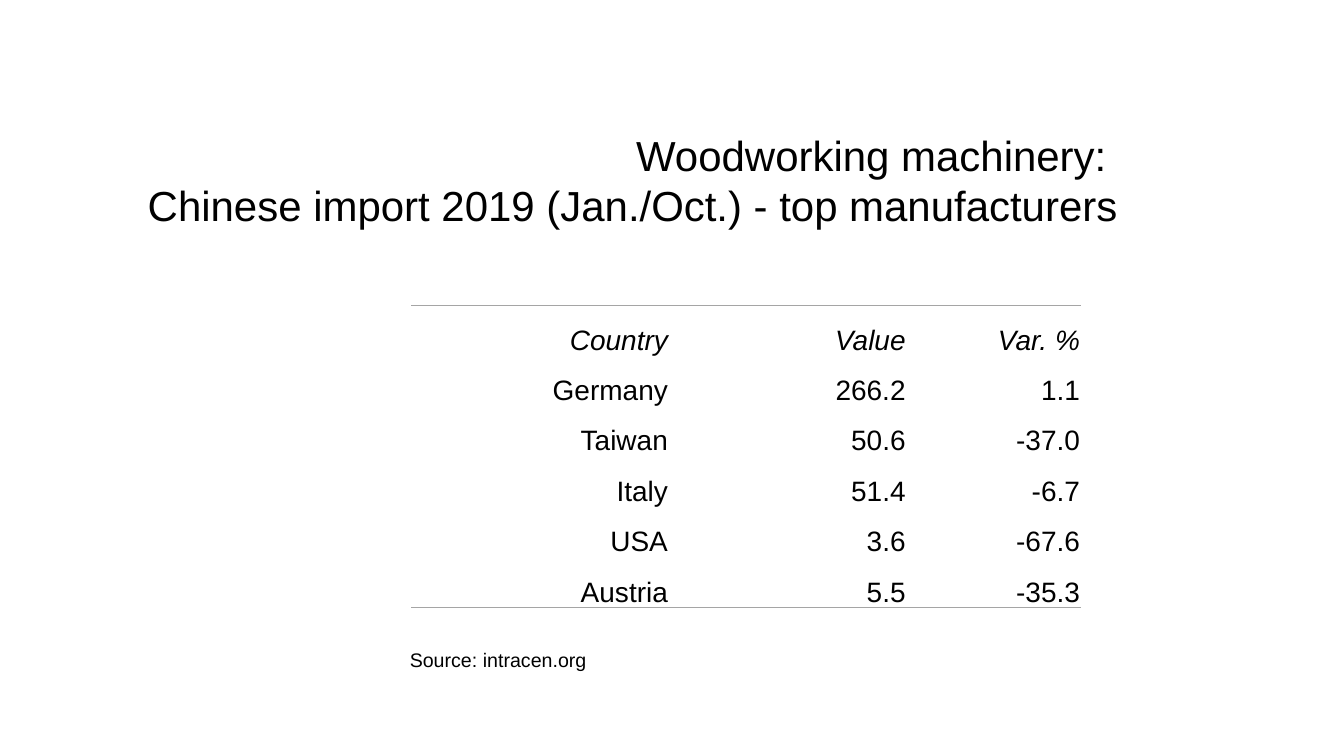
from lxml.etree import SubElement
from pptx import Presentation
from pptx.dml.color import RGBColor
from pptx.enum.text import MSO_ANCHOR, MSO_AUTO_SIZE, PP_ALIGN
from pptx.oxml import parse_xml
from pptx.oxml.ns import nsdecls, qn
from pptx.util import Pt

BLACK = "000000"
RULE_GREY = "A5A5A5"
PLAIN_TABLE_STYLE = "{2D5ABB26-0587-4C30-8999-92F81FD0307C}"
COLUMN_WIDTHS = (184.3, 169.9, 124.6)
IMPORTS = (
    ("Country", "Value", "Var. %"),
    ("Germany", "266.2", "1.1"),
    ("Taiwan", "50.6", "-37.0"),
    ("Italy", "51.4", "-6.7"),
    ("USA", "3.6", "-67.6"),
    ("Austria", "5.5", "-35.3"),
)


def color(value):
    """Turn a hex string into a colour."""
    return RGBColor.from_string(value)


def format_text(text_frame, size, alignment, italic=False):
    """Apply the slide's type style to every run."""
    for paragraph in text_frame.paragraphs:
        paragraph.alignment = alignment
        for run in paragraph.runs:
            run.font.name = "Arial"
            run.font.size = Pt(size)
            run.font.italic = italic
            run.font.color.rgb = color(BLACK)


def add_rule(cell, side):
    """Draw a thin grey border on the top (T) or bottom (B) of a cell."""
    line = parse_xml(f'<a:ln{side} {nsdecls("a")} w="{Pt(1)}"/>')
    fill = SubElement(line, qn("a:solidFill"))
    SubElement(fill, qn("a:srgbClr"), val=RULE_GREY)
    cell._tc.get_or_add_tcPr().insert(0, line)


def place_title(slide, left, top, width, height):
    """Fill the title placeholder with the right-aligned heading."""
    title = slide.shapes.title
    title.left, title.top, title.width, title.height = map(Pt, (left, top, width, height))
    text_frame = title.text_frame
    text_frame.text = "Woodworking machinery: \vChinese import 2019 (Jan./Oct.) - top manufacturers"
    text_frame.word_wrap = True
    text_frame.auto_size = MSO_AUTO_SIZE.NONE
    text_frame.vertical_anchor = MSO_ANCHOR.TOP
    text_frame.paragraphs[0].line_spacing = Pt(36)
    format_text(text_frame, 30, PP_ALIGN.RIGHT)


def format_cell(cell, text, italic):
    """Write one right-aligned, unfilled cell."""
    cell.text = text
    cell.fill.background()
    cell.vertical_anchor = MSO_ANCHOR.BOTTOM
    cell.margin_left = cell.margin_right = cell.margin_top = Pt(0.75)
    cell.margin_bottom = Pt(0)
    format_text(cell.text_frame, 20, PP_ALIGN.RIGHT, italic)


def add_import_table(slide, left, top, width, height):
    """Add the import figures between two horizontal rules."""
    frame = slide.shapes.add_table(
        len(IMPORTS), len(COLUMN_WIDTHS), Pt(left), Pt(top), Pt(width), Pt(height)
    )
    table = frame.table
    table.first_row = table.horz_banding = False
    table._tbl.tblPr.find(qn("a:tableStyleId")).text = PLAIN_TABLE_STYLE
    for column, column_width in zip(table.columns, COLUMN_WIDTHS):
        column.width = Pt(column_width)
    for row_index, (row, values) in enumerate(zip(table.rows, IMPORTS)):
        row.height = Pt(height / len(IMPORTS))
        for cell, value in zip(row.cells, values):
            format_cell(cell, value, italic=row_index == 0)
    for row_index, side in ((0, "T"), (len(IMPORTS) - 1, "B")):
        for cell in table.rows[row_index].cells:
            add_rule(cell, side)


def add_source(slide, left, top, width, height):
    """Add the source line below the table."""
    shape = slide.shapes.add_textbox(Pt(left), Pt(top), Pt(width), Pt(height))
    shape.text_frame.text = "Source: intracen.org"
    shape.text_frame.word_wrap = True
    format_text(shape.text_frame, 14, PP_ALIGN.LEFT)


def main():
    """Build and save the slide."""
    presentation = Presentation()
    presentation.slide_width = Pt(960.5)
    presentation.slide_height = Pt(540)
    slide = presentation.slides.add_slide(presentation.slide_layouts[5])
    place_title(slide, 91.4, 88.9, 715, 80)
    add_import_table(slide, 293.8, 218.2, sum(COLUMN_WIDTHS), 216)
    add_source(slide, 285.8, 459.4, 155.5, 24.5)
    presentation.save("out.pptx")


if __name__ == "__main__":
    main()
